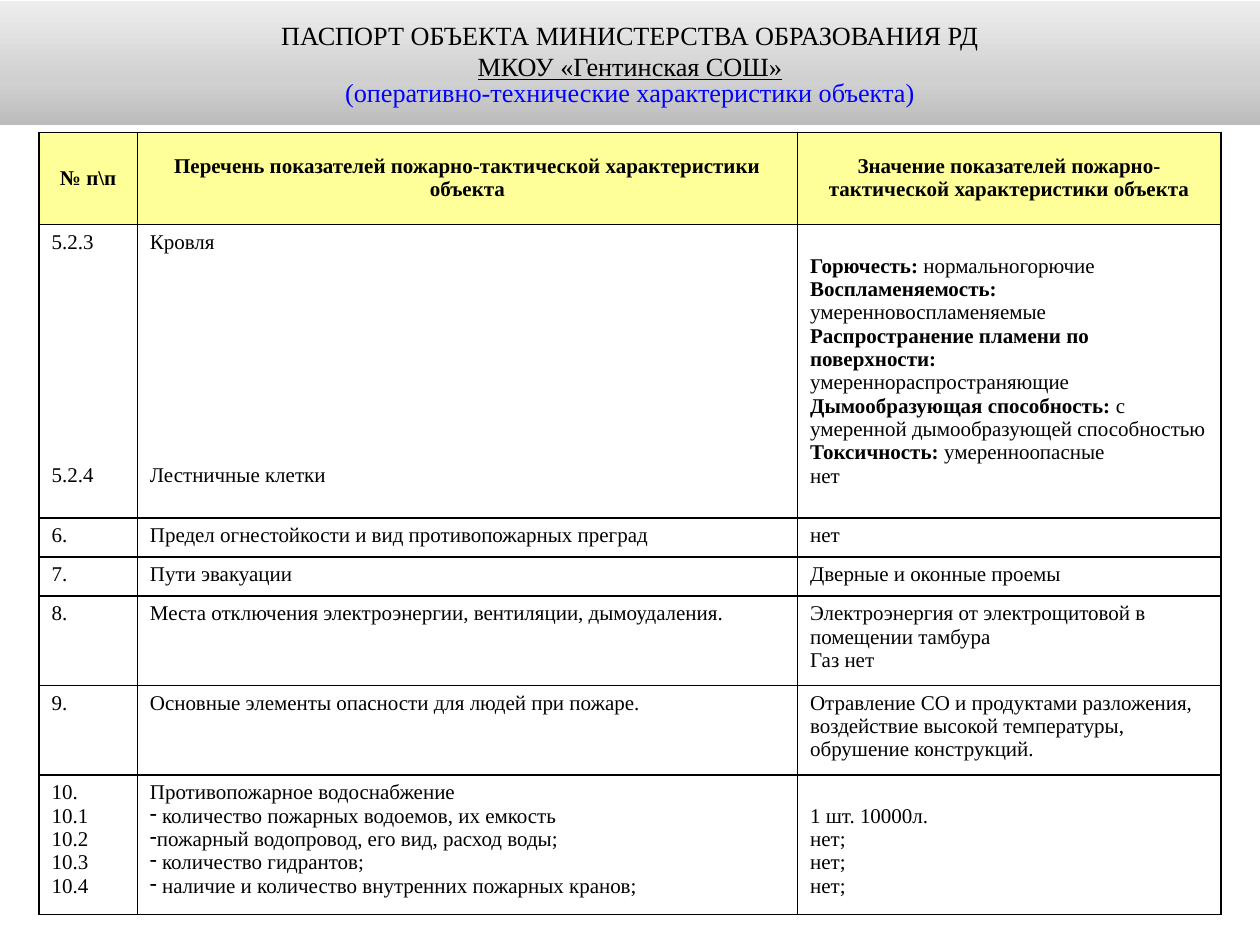
from copy import deepcopy

from lxml.etree import SubElement
from pptx import Presentation
from pptx.dml.color import RGBColor
from pptx.enum.shapes import MSO_SHAPE
from pptx.enum.text import MSO_ANCHOR, PP_ALIGN
from pptx.oxml import parse_xml
from pptx.oxml.ns import nsdecls, qn
from pptx.util import Inches, Pt

FONT = "Times New Roman"
BLACK = RGBColor(0x00, 0x00, 0x00)
BLUE = RGBColor(0x00, 0x00, 0xFF)
WHITE = RGBColor(0xFF, 0xFF, 0xFF)
YELLOW = RGBColor(0xFF, 0xFF, 0x99)
BANNER_STOPS = [
    (0, RGBColor(0xBC, 0xBC, 0xBC)),
    (0.35, RGBColor(0xD0, 0xD0, 0xD0)),
    (1, RGBColor(0xED, 0xED, 0xED)),
]

COLUMN_WIDTHS = [0.78, 5.24, 3.36]
ROW_HEIGHTS = [0.73, 2.33, 0.31, 0.31, 0.71, 0.71, 1.11]
CELL_MARGIN = 0.05
LINE_HEIGHT = Pt(13.3)
ROOF_GAP = 9 * LINE_HEIGHT

HEADINGS = [
    "№ п\\п",
    "Перечень показателей пожарно-тактической характеристики объекта",
    "Значение показателей пожарно-тактической характеристики объекта",
]
# Each cell is a list of paragraphs; text before "|" is bold, a leading "-" is a bullet.
INDICATORS = [
    (["5.2.3", "5.2.4"], ["Кровля", "Лестничные клетки"], [
        "Горючесть:| нормальногорючие",
        "Воспламеняемость: |умеренновоспламеняемые",
        "Распространение пламени по поверхности:|",
        "умереннораспространяющие",
        "Дымообразующая способность: |с умеренной дымообразующей способностью",
        "Токсичность:| умеренноопасные",
        "нет",
    ]),
    (["6."], ["Предел огнестойкости и вид противопожарных преград"], ["нет"]),
    (["7."], ["Пути эвакуации"], ["Дверные и оконные проемы"]),
    (["8."], ["Места отключения электроэнергии, вентиляции, дымоудаления."],
     ["Электроэнергия от электрощитовой в помещении тамбура", "Газ нет"]),
    (["9."], ["Основные элементы опасности для людей при пожаре."],
     ["Отравление СО и продуктами разложения, воздействие высокой температуры, "
      "обрушение конструкций."]),
    (["10.", "10.1", "10.2", "10.3", "10.4"], [
        "Противопожарное водоснабжение",
        "- количество пожарных водоемов, их емкость",
        "-пожарный водопровод, его вид, расход воды;",
        "- количество гидрантов;",
        "- наличие и количество внутренних пожарных кранов;",
    ], ["1 шт. 10000л.", "нет;", "нет;", "нет;"]),
]


def write_paragraph(paragraph, text, size=12, color=BLACK, bold=False, underline=False,
                    align=PP_ALIGN.LEFT, line_spacing=None, space_before=None):
    """Fill a paragraph, turning the "|" and leading "-" marks into format."""
    paragraph.alignment = align
    if line_spacing:
        paragraph.line_spacing = line_spacing
    if space_before:
        paragraph.space_before = space_before
    if text.startswith("-"):
        text = text[1:]
        properties = paragraph._p.get_or_add_pPr()
        properties.set("marL", "0")
        properties.set("indent", "0")
        SubElement(properties, qn("a:buChar")).set("char", "-")
    label, _, value = text.rpartition("|")
    for part, part_bold in ((label, True), (value, bold)):
        if part:
            run = paragraph.add_run()
            run.text = part
            run.font.name = FONT
            run.font.size = Pt(size)
            run.font.bold = part_bold
            run.font.underline = underline
            run.font.color.rgb = color


def write_text(frame, lines, gap=None, **style):
    """Write one paragraph per line, with an optional gap between them."""
    for index, line in enumerate(lines):
        paragraph = frame.add_paragraph() if index else frame.paragraphs[0]
        write_paragraph(paragraph, line, space_before=gap if index else None, **style)


def style_cell(cell, fill):
    cell.fill.solid()
    cell.fill.fore_color.rgb = fill
    cell.margin_left = cell.margin_right = Inches(0.1)
    cell.margin_top = cell.margin_bottom = Inches(CELL_MARGIN)
    properties = cell._tc.get_or_add_tcPr()
    for index, side in enumerate("LRTB"):
        properties.insert(index, parse_xml(
            f'<a:ln{side} {nsdecls("a")} w="{Pt(1)}"><a:solidFill>'
            f'<a:srgbClr val="{BLACK}"/></a:solidFill></a:ln{side}>'))


def add_banner(slide, left, top, width, height):
    banner = slide.shapes.add_shape(MSO_SHAPE.RECTANGLE, left, top, width, height)
    banner.shadow.inherit = False
    banner.line.fill.background()
    banner.fill.gradient()
    banner.fill.gradient_angle = 90
    stop_list = banner._element.spPr.find(".//" + qn("a:gsLst"))
    stop_list.append(deepcopy(stop_list[-1]))
    for stop, (position, color) in zip(banner.fill.gradient_stops, BANNER_STOPS):
        stop.position = position
        stop.color.rgb = color

    frame = banner.text_frame
    frame.word_wrap = True
    frame.vertical_anchor = MSO_ANCHOR.MIDDLE
    title_style = {"size": 15, "align": PP_ALIGN.CENTER}
    write_text(frame, ["ПАСПОРТ ОБЪЕКТА МИНИСТЕРСТВА ОБРАЗОВАНИЯ РД"], **title_style)
    write_paragraph(frame.add_paragraph(), "МКОУ «Гентинская СОШ»",
                    underline=True, **title_style)
    write_paragraph(frame.add_paragraph(), "(оперативно-технические характеристики объекта)",
                    color=BLUE, line_spacing=0.8, **title_style)


def add_indicator_table(slide, left, top, width, height):
    table = slide.shapes.add_table(len(ROW_HEIGHTS), len(COLUMN_WIDTHS),
                                   left, top, width, height).table
    table.first_row = table.horz_banding = False
    for column, column_width in zip(table.columns, COLUMN_WIDTHS):
        column.width = Inches(column_width)
    for row, row_height in zip(table.rows, ROW_HEIGHTS):
        row.height = Inches(row_height)

    for column, heading in enumerate(HEADINGS):
        cell = table.cell(0, column)
        style_cell(cell, YELLOW)
        cell.vertical_anchor = MSO_ANCHOR.MIDDLE
        write_text(cell.text_frame, [heading], bold=True, align=PP_ALIGN.CENTER)

    for row, indicator in enumerate(INDICATORS, start=1):
        for column, lines in enumerate(indicator):
            cell = table.cell(row, column)
            style_cell(cell, WHITE)
            is_roof_label = row == 1 and column < 2
            write_text(cell.text_frame, lines, gap=ROOF_GAP if is_roof_label else None)

    table.cell(1, 2).vertical_anchor = MSO_ANCHOR.MIDDLE
    # The water supply values start level with item 10.1.
    table.cell(len(INDICATORS), 2).margin_top = Inches(CELL_MARGIN) + LINE_HEIGHT


def main():
    presentation = Presentation()
    presentation.slide_width = Inches(10)
    presentation.slide_height = Inches(7.5)
    slide = presentation.slides.add_slide(presentation.slide_layouts[6])
    add_indicator_table(slide, Inches(0.31), Inches(1.05),
                        Inches(sum(COLUMN_WIDTHS)), Inches(sum(ROW_HEIGHTS)))
    add_banner(slide, Inches(0), Inches(0.01), Inches(10), Inches(0.98))
    presentation.save("out.pptx")


if __name__ == "__main__":
    main()
